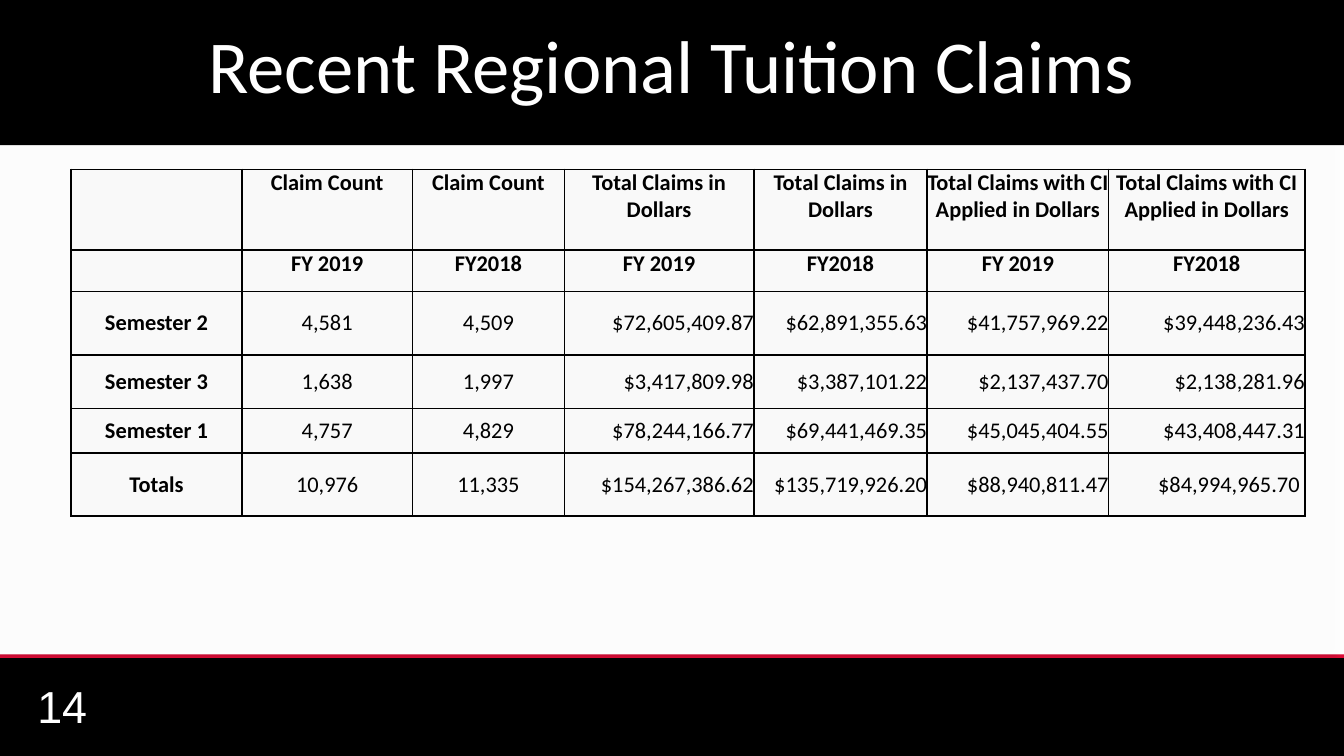
from lxml.etree import SubElement
from pptx import Presentation
from pptx.dml.color import RGBColor
from pptx.enum.shapes import MSO_CONNECTOR as Connector, MSO_SHAPE as Shape
from pptx.enum.text import MSO_ANCHOR as Anchor, PP_ALIGN as Align
from pptx.oxml.ns import qn
from pptx.util import Inches, Pt

COLORS = {
    "band": "000000",
    "rule": "E20D38",
    "panel": "FFFFFF",
    "cell": "F9F9F9",
    "ink": "000000",
    "light": "FFFFFF",
}
COLUMNS, ROWS = 100, 56.25
COLUMN_WIDTHS = [12.7, 12.7, 11.3, 14.1, 12.9, 13.5, 14.6]
ROW_HEIGHTS = [6, 3.1, 4.7, 4, 3.3, 4.7]
MEASURES = ["Claim Count", "Total Claims in Dollars", "Total Claims with CI Applied in Dollars"]
HEADER_ROWS = [
    [""] + [measure for measure in MEASURES for _ in range(2)],
    [""] + ["FY 2019", "FY2018"] * len(MEASURES),
]
CLAIM_ROWS = [
    ["Semester 2", "4,581", "4,509", "$72,605,409.87", "$62,891,355.63", "$41,757,969.22", "$39,448,236.43"],
    ["Semester 3", "1,638", "1,997", "$3,417,809.98", "$3,387,101.22", "$2,137,437.70", "$2,138,281.96"],
    ["Semester 1", "4,757", "4,829", "$78,244,166.77", "$69,441,469.35", "$45,045,404.55", "$43,408,447.31"],
    ["Totals", "10,976", "11,335", "$154,267,386.62", "$135,719,926.20", "$88,940,811.47", "$84,994,965.70 "],
]


def color(name):
    """Return the named colour."""
    return RGBColor.from_string(COLORS[name])


class ClaimsSlide:
    """Holds the style and the slide, measured in grid columns and rows."""

    def __init__(self, deck):
        self.unit = deck.slide_width / COLUMNS
        self.slide = deck.slides.add_slide(deck.slide_layouts[6])
        self.shapes = self.slide.shapes

    def lengths(self, *cells):
        """Turn grid units into slide lengths."""
        return [round(cell * self.unit) for cell in cells]

    def label(self, frame, text, size, ink, font="Calibri", align=Align.CENTER, bold=False):
        """Add one styled run to the first paragraph of a frame."""
        para = frame.paragraphs[0]
        para.alignment = align
        span = para.add_run()
        span.text = text
        span.font.name = font
        span.font.size = Pt(size)
        span.font.bold = bold
        span.font.color.rgb = color(ink)

    def block(self, fill, *place):
        """Add a plain filled rectangle."""
        box = self.shapes.add_shape(Shape.RECTANGLE, *self.lengths(*place))
        box.shadow.inherit = False
        box.fill.solid()
        box.fill.fore_color.rgb = color(fill)
        box.line.fill.background()
        return box

    def panel(self, *place):
        """Add the translucent content panel with its soft shadow."""
        box = self.block("panel", *place)
        properties = box._element.spPr
        fill = properties.find(f"{qn('a:solidFill')}/{qn('a:srgbClr')}")
        SubElement(fill, qn("a:alpha"), val="95000")
        shadow = SubElement(
            properties.find(qn("a:effectLst")), qn("a:outerShdw"),
            blurRad=str(Pt(4)), dist=str(Pt(3)), dir=str(150 * 60000), rotWithShape="0",
        )
        tint = SubElement(shadow, qn("a:srgbClr"), val=COLORS["band"])
        SubElement(tint, qn("a:alpha"), val="18000")

    def rule(self, left, right, row):
        """Add the horizontal accent line."""
        line = self.shapes.add_connector(Connector.STRAIGHT, *self.lengths(left, row, right, row))
        line.line.color.rgb = color("rule")
        line.line.width = Pt(2)
        SubElement(line._element.spPr, qn("a:effectLst"))

    def title(self, text, *place):
        """Add the title band."""
        frame = self.block("band", *place).text_frame
        frame.word_wrap = True
        frame.vertical_anchor = Anchor.MIDDLE
        frame.margin_left, frame.margin_right = self.lengths(5, 5)
        frame.margin_top = frame.margin_bottom = 0
        self.label(frame, text, 40, "light")

    def number(self, text, *place):
        """Add the slide number."""
        frame = self.shapes.add_textbox(*self.lengths(*place)).text_frame
        frame.word_wrap = True
        frame.vertical_anchor = Anchor.MIDDLE
        self.label(frame, text, 24, "light", "Arial", Align.LEFT)

    def cell(self, cell, text, header, column):
        """Fill, border and label one table cell."""
        cell.fill.solid()
        cell.fill.fore_color.rgb = color("cell")
        cell.margin_left = cell.margin_right = cell.margin_top = cell.margin_bottom = 0
        cell.vertical_anchor = Anchor.TOP if header else Anchor.MIDDLE
        properties = cell._tc.get_or_add_tcPr()
        for index, side in enumerate(("lnL", "lnR", "lnT", "lnB")):
            border = properties.makeelement(qn(f"a:{side}"), {"w": str(Pt(1))})
            SubElement(SubElement(border, qn("a:solidFill")), qn("a:srgbClr"), val=COLORS["ink"])
            properties.insert(index, border)
        if text:
            align = Align.CENTER if header or column < 3 else Align.RIGHT
            self.label(cell.text_frame, text, 12, "ink", align=align, bold=header or column == 0)

    def table(self, left, top):
        """Add the claims table."""
        rows = HEADER_ROWS + CLAIM_ROWS
        place = self.lengths(left, top, sum(COLUMN_WIDTHS), sum(ROW_HEIGHTS))
        table = self.shapes.add_table(len(rows), len(COLUMN_WIDTHS), *place).table
        table.first_row = table.horz_banding = False
        for column, width in zip(table.columns, self.lengths(*COLUMN_WIDTHS)):
            column.width = width
        for row, height in zip(table.rows, self.lengths(*ROW_HEIGHTS)):
            row.height = height
        for row, texts in enumerate(rows):
            for column, text in enumerate(texts):
                self.cell(table.cell(row, column), text, row < len(HEADER_ROWS), column)


def main():
    """Build and save the claims slide."""
    deck = Presentation()
    deck.slide_width = Inches(10)
    deck.slide_height = round(deck.slide_width * ROWS / COLUMNS)
    page = ClaimsSlide(deck)
    page.block("band", -2.8, 48.8, 105.6, 7.5)
    page.rule(-2.9, 102.8, 48.8)
    page.number("14", 1.8, 51, 23.3, 3)
    page.panel(0, 8.4, COLUMNS, 40.3)
    page.title("Recent Regional Tuition Claims", -0.9, -1.3, 101.7, 12.1)
    page.table(5.3, 12.6)
    deck.save("out.pptx")


if __name__ == "__main__":
    main()
